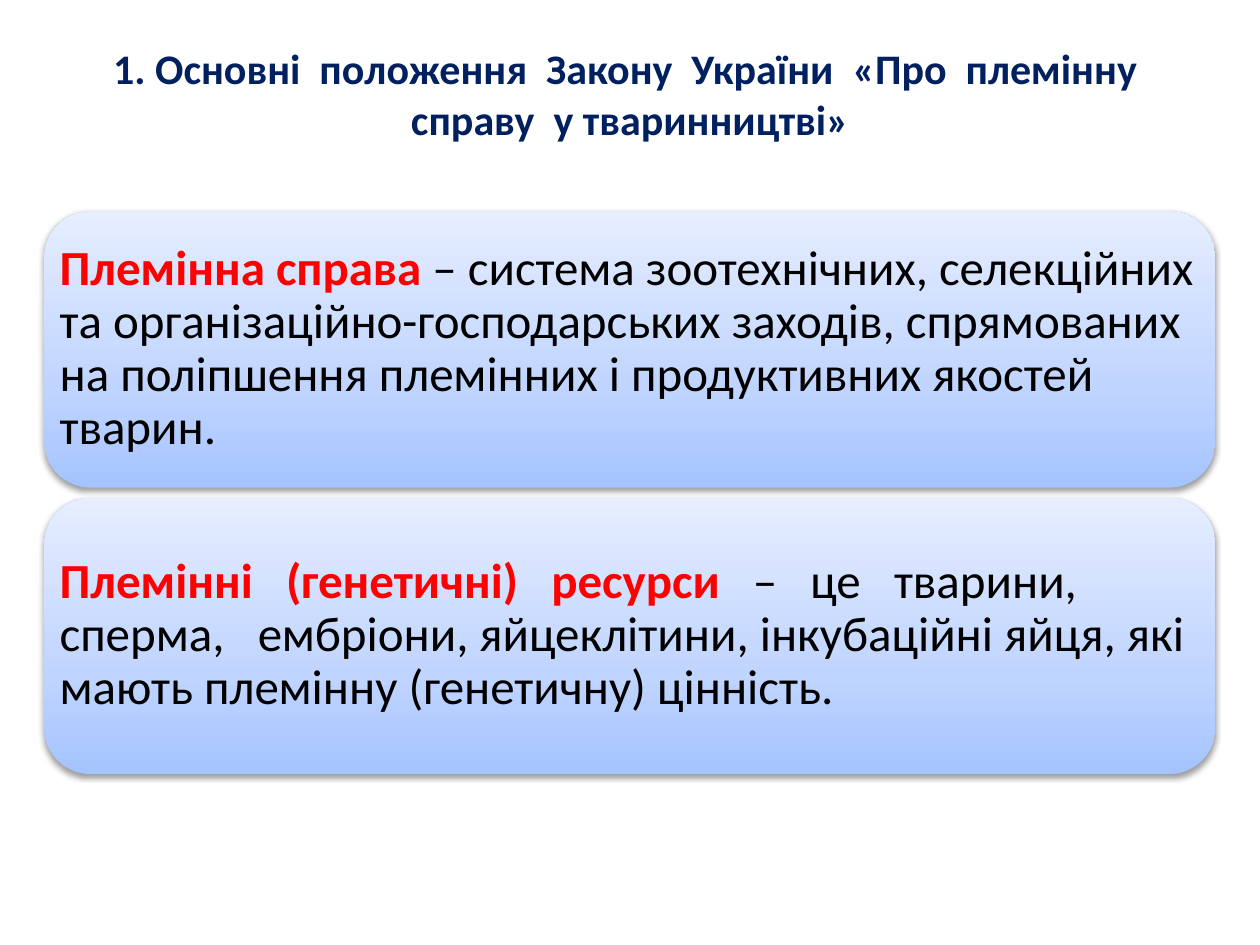
import pptx
import pptx.util
import pptx.dml.color
import pptx.enum.shapes
import pptx.enum.text
import pptx.oxml
import pptx.oxml.ns
from pptx.util import Pt
from pptx.dml.color import RGBColor

TITLE = "1. Основні  положення  Закону  України  «Про  племінну  справу  у тваринництві»"
DEFINITIONS = [
    ("Племінна справа ",
     "– система зоотехнічних, селекційних та організаційно-господарських заходів, "
     "спрямованих на поліпшення племінних і продуктивних якостей тварин."),
    ("Племінні   (генетичні)   ресурси   ",
     "–   це   тварини,   сперма,   ембріони, яйцеклітини, інкубаційні яйця, "
     "які мають племінну (генетичну) цінність."),
]

NAVY = RGBColor(0x00, 0x20, 0x60)
RED = RGBColor(0xFF, 0x00, 0x00)
BLACK = RGBColor(0x00, 0x00, 0x00)
CARD_STOPS = [
    (0, RGBColor(0xA4, 0xC4, 0xFF)),
    (35, RGBColor(0xBF, 0xD4, 0xFF)),
    (100, RGBColor(0xE6, 0xEE, 0xFF)),
]

CARD_LEFT, CARD_TOP = 25.4, 120.8
CARD_WIDTH, CARD_HEIGHT, CARD_PITCH = 669, 157.8, 163.7
CARD_INSET_X, CARD_INSET_Y = 1, 1


def add_run(paragraph, text, *, size, color, bold=False):
    run = paragraph.add_run()
    run.text = text
    run.font.name = "Calibri"
    run.font.size = Pt(size)
    run.font.bold = bold
    run.font.color.rgb = color


def style_card(shape):
    namespace = pptx.oxml.ns.nsdecls("a")
    stops = "".join(
        f'<a:gs pos="{position * 1000}"><a:srgbClr val="{color}"/></a:gs>'
        for position, color in CARD_STOPS)
    gradient = pptx.oxml.parse_xml(
        f'<a:gradFill {namespace} rotWithShape="1"><a:gsLst>{stops}</a:gsLst>'
        '<a:lin ang="16200000" scaled="0"/></a:gradFill>')
    shadow = pptx.oxml.parse_xml(
        f'<a:effectLst {namespace}><a:outerShdw blurRad="{Pt(3.1)}" dist="{Pt(1.6)}" '
        'dir="5400000" rotWithShape="0"><a:srgbClr val="000000">'
        '<a:alpha val="38000"/></a:srgbClr></a:outerShdw></a:effectLst>')
    shape.line.fill.background()
    properties = shape.element.spPr
    properties.find(pptx.oxml.ns.qn("a:prstGeom")).addnext(gradient)
    properties.append(shadow)


def add_title(slide):
    box = slide.shapes.add_textbox(Pt(20), Pt(21), Pt(680), Pt(65.5))
    box.text_frame.word_wrap = True
    paragraph = box.text_frame.paragraphs[0]
    paragraph.alignment = pptx.enum.text.PP_ALIGN.CENTER
    add_run(paragraph, TITLE, size=24, color=NAVY, bold=True)


def add_card(slide, index, term, meaning):
    card = slide.shapes.add_shape(
        pptx.enum.shapes.MSO_SHAPE.ROUNDED_RECTANGLE,
        Pt(CARD_LEFT), Pt(CARD_TOP + index * CARD_PITCH),
        Pt(CARD_WIDTH), Pt(CARD_HEIGHT))
    style_card(card)
    frame = card.text_frame
    frame.word_wrap = True
    frame.vertical_anchor = pptx.enum.text.MSO_ANCHOR.MIDDLE
    frame.margin_left = frame.margin_right = Pt(CARD_INSET_X)
    frame.margin_top = frame.margin_bottom = Pt(CARD_INSET_Y)
    paragraph = frame.paragraphs[0]
    paragraph.alignment = pptx.enum.text.PP_ALIGN.LEFT
    paragraph.line_spacing = 0.9
    add_run(paragraph, term, size=28, color=RED, bold=True)
    add_run(paragraph, meaning, size=28, color=BLACK)


def main():
    presentation = pptx.Presentation()
    presentation.slide_width = Pt(720)
    presentation.slide_height = Pt(540)
    slide = presentation.slides.add_slide(presentation.slide_layouts[6])
    add_title(slide)
    for index, (term, meaning) in enumerate(DEFINITIONS):
        add_card(slide, index, term, meaning)
    presentation.save("out.pptx")


if __name__ == "__main__":
    main()
